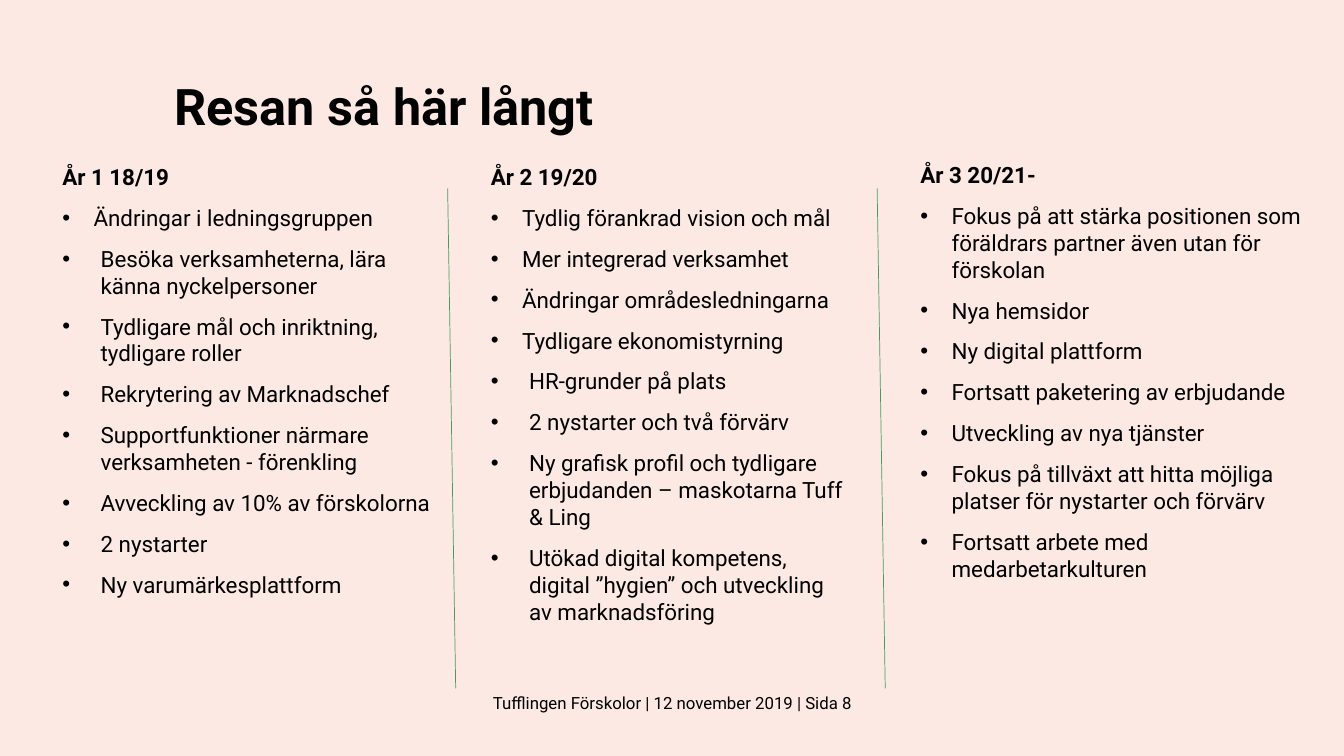
import pptx
import pptx.util
import pptx.dml.color
import pptx.enum.shapes
import pptx.enum.text
import pptx.oxml
import pptx.oxml.ns
from pptx.util import Inches

FONT = "Roboto"
INK, GREEN, BLUSH = "000000", "489B5F", "FCE9E3"
NARROW, WIDE = 0.31, 0.38  # bullet indents

# Each year: box, heading, bullet points grouped by indent
YEARS = [
    ((0.52, 1.57, 4, 3.81), "År 1 18/19", [
        (NARROW, ["Ändringar i ledningsgruppen"]),
        (WIDE, ["Besöka verksamheterna, lära känna nyckelpersoner",
                "Tydligare mål och inriktning, tydligare roller",
                "Rekrytering av Marknadschef",
                "Supportfunktioner närmare verksamheten - förenkling",
                "Avveckling av 10% av förskolorna",
                "2 nystarter",
                "Ny varumärkesplattform"]),
    ]),
    ((4.77, 1.57, 3.77, 3.81), "År 2 19/20", [
        (NARROW, ["Tydlig förankrad vision och mål",
                  "Mer integrerad verksamhet",
                  "Ändringar områdesledningarna",
                  "Tydligare ekonomistyrning"]),
        (WIDE, ["HR-grunder på plats",
                "2 nystarter och två förvärv",
                "Ny grafisk profil och tydligare erbjudanden – maskotarna Tuff & Ling",
                "Utökad digital kompetens, digital ”hygien” och utveckling av marknadsföring"]),
    ]),
    ((9.03, 1.55, 4.02, 3.81), "År 3 20/21-", [
        (NARROW, ["Fokus på att stärka positionen som föräldrars partner även utan för förskolan",
                  "Nya hemsidor",
                  "Ny digital plattform",
                  "Fortsatt paketering av erbjudande",
                  "Utveckling av nya tjänster",
                  "Fokus på tillväxt att hitta möjliga platser för nystarter och förvärv",
                  "Fortsatt arbete med medarbetarkulturen"]),
    ]),
]


def color(hex_code):
    return pptx.dml.color.RGBColor.from_string(hex_code)


def write(paragraph, text, size, bold=False):
    paragraph.text = text
    for run in paragraph.runs:
        run.font.name = FONT
        run.font.size = pptx.util.Pt(size)
        run.font.bold = bold
        run.font.color.rgb = color(INK)


def add_bullet(paragraph, indent):
    properties = paragraph._p.get_or_add_pPr()
    properties.set("marL", str(Inches(indent)))
    properties.set("indent", str(-Inches(indent)))
    for tag, name, value in (("a:buFont", "typeface", "Arial"), ("a:buChar", "char", "•")):
        element = pptx.oxml.ns.qn(tag)
        properties.append(properties.makeelement(element, {name: value}))


def add_title(slide, box):
    title = slide.shapes.title
    title.left, title.top, title.width, title.height = map(Inches, box)
    frame = title.text_frame
    frame.word_wrap = True
    frame.auto_size = pptx.enum.text.MSO_AUTO_SIZE.NONE
    frame.vertical_anchor = pptx.enum.text.MSO_ANCHOR.TOP
    heading = frame.paragraphs[0]
    write(heading, "Resan så här långt", 36, bold=True)
    heading.alignment = pptx.enum.text.PP_ALIGN.LEFT
    heading.line_spacing = 0.9


def add_year(slide, box, heading, groups):
    frame = slide.shapes.add_textbox(*map(Inches, box)).text_frame
    frame.word_wrap = True
    write(frame.paragraphs[0], heading, 16, bold=True)
    for indent, points in groups:
        for point in points:
            paragraph = frame.add_paragraph()
            write(paragraph, point, 16)
            paragraph.space_before = pptx.util.Pt(10)
            add_bullet(paragraph, indent)


def add_divider(slide, left, top, width, height):
    divider = slide.shapes.add_connector(
        pptx.enum.shapes.MSO_CONNECTOR.STRAIGHT,
        Inches(left), Inches(top), Inches(left + width), Inches(top + height))
    divider.line.color.rgb = color(GREEN)
    divider.line.width = pptx.util.Pt(0.5)
    properties = divider._element.spPr
    properties.append(properties.makeelement(pptx.oxml.ns.qn("a:effectLst"), {}))


def add_footer(slide, box):
    frame = slide.shapes.add_textbox(*map(Inches, box)).text_frame
    frame.word_wrap = False
    footer = frame.paragraphs[0]
    write(footer, "Tufflingen Förskolor | 12 november 2019 | Sida 8", 12)
    footer.alignment = pptx.enum.text.PP_ALIGN.CENTER


def main():
    deck = pptx.Presentation()
    deck.slide_width, deck.slide_height = Inches(13.33), Inches(7.5)
    slide = deck.slides.add_slide(deck.slide_layouts.get_by_name("Title Only"))
    slide.background.fill.solid()
    slide.background.fill.fore_color.rgb = color(BLUSH)

    add_footer(slide, (4.66, 6.82, 4.02, 0.3))
    add_title(slide, (1.63, 0.76, 9.33, 0.56))
    for box, heading, groups in YEARS:
        add_year(slide, box, heading, groups)
    # Slightly slanted lines between the years
    for left in (4.44, 8.7):
        add_divider(slide, left, 1.87, 0.08, 4.96)

    deck.save("out.pptx")


if __name__ == "__main__":
    main()
